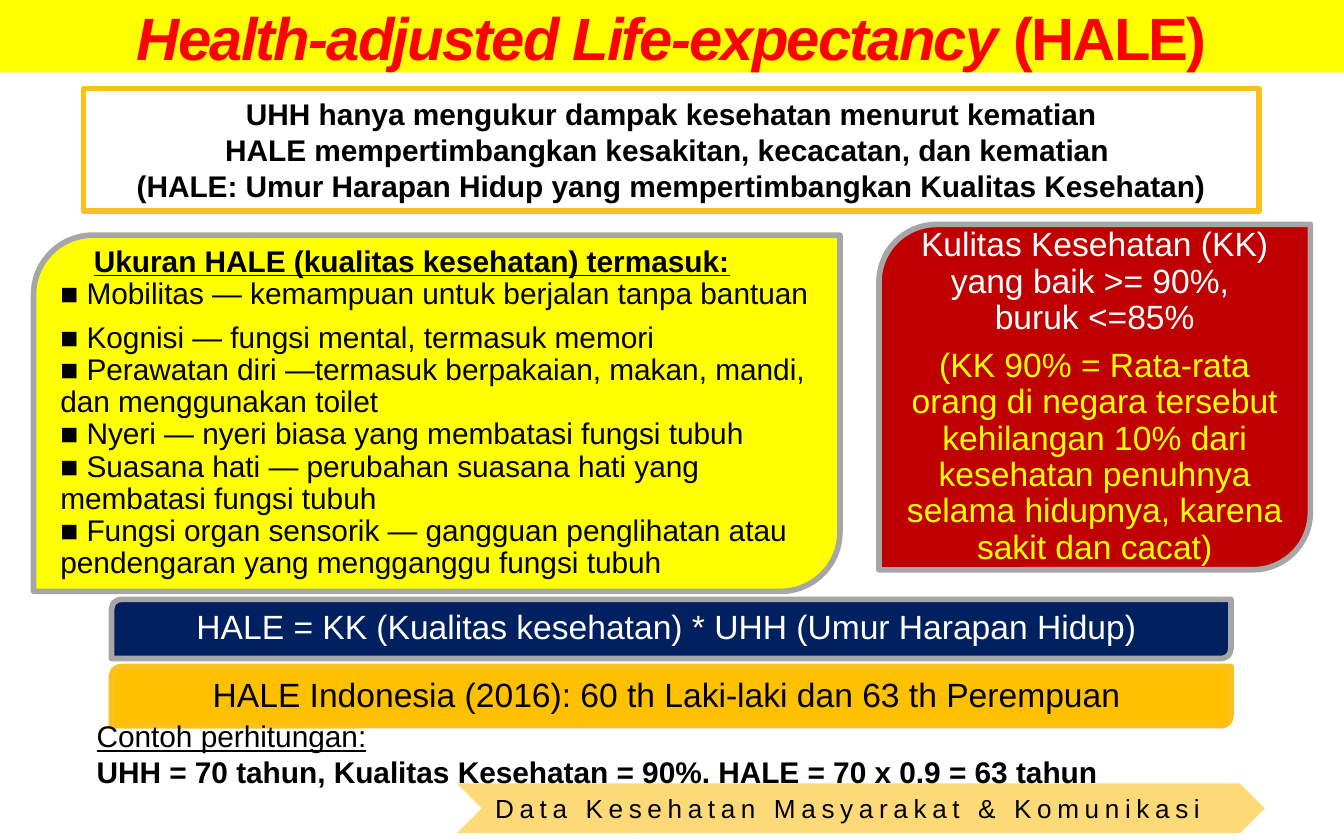
from lxml.etree import SubElement
from pptx import Presentation
from pptx.dml.color import RGBColor
from pptx.enum.shapes import MSO_SHAPE
from pptx.enum.text import MSO_ANCHOR, PP_ALIGN
from pptx.oxml.ns import qn
from pptx.util import Inches, Pt

BLACK = RGBColor(0x00, 0x00, 0x00)
WHITE = RGBColor(0xFF, 0xFF, 0xFF)
YELLOW = RGBColor(0xFF, 0xFF, 0x00)
RED = RGBColor(0xFF, 0x00, 0x00)
DARK_RED = RGBColor(0xC0, 0x00, 0x00)
NAVY = RGBColor(0x00, 0x20, 0x60)
GOLD = RGBColor(0xFF, 0xC0, 0x00)
AMBER = RGBColor(0xFB, 0xC0, 0x1E)
PALE_AMBER = RGBColor(0xFD, 0xD9, 0x78)
GREY = RGBColor(0xA6, 0xA6, 0xA6)


def add_box(kind, left, top, width, height, fill=None, line=None, inset=None):
    """Add a shadowless shape with wrapped, vertically centred text."""
    sp = s.shapes.add_shape(kind, Inches(left), Inches(top), Inches(width), Inches(height))
    sp.shadow.inherit = False
    if fill is None:
        sp.fill.background()
    else:
        sp.fill.solid()
        sp.fill.fore_color.rgb = fill
    if line is None:
        sp.line.fill.background()
    else:
        sp.line.color.rgb = line
        sp.line.width = Pt(3)
    tf = sp.text_frame
    tf.word_wrap = True
    tf.vertical_anchor = MSO_ANCHOR.MIDDLE
    if inset is not None:
        tf.margin_left = tf.margin_right = tf.margin_top = tf.margin_bottom = Inches(inset)
    return tf


def add_paragraph(tf, runs, size, align=PP_ALIGN.CENTER, tight=False):
    """Add (lines, colour, styles) runs; styles holds any of b, i and u."""
    p = tf.paragraphs[0]
    if p.runs:
        p = tf.add_paragraph()
    p.alignment = align
    if tight:
        p.line_spacing = 0.9
        after = SubElement(p._p.get_or_add_pPr(), qn("a:spcAft"))
        SubElement(after, qn("a:spcPct")).set("val", "35000")
    for lines, color, styles in runs:
        for n, line in enumerate(lines.split("\n")):
            if n:
                p.add_line_break()
            if not line:
                continue
            r = p.add_run()
            r.text = line
            r.font.name = "Arial"
            r.font.size = Pt(size)
            r.font.color.rgb = color
            r.font.bold = "b" in styles
            r.font.italic = "i" in styles
            r.font.underline = "u" in styles
    return p


prs = Presentation()
prs.slide_width = Inches(10)
prs.slide_height = Inches(6.25)
s = prs.slides.add_slide(prs.slide_layouts[6])

# Footer ribbon
tf = add_box(MSO_SHAPE.CHEVRON, 3.4, 5.83, 6.01, 0.37, PALE_AMBER)
p = add_paragraph(tf, [("Data Kesehatan Masyarakat & Komunikasi", BLACK, "")], 14, PP_ALIGN.JUSTIFY)
p.runs[0].font._element.set("spc", "300")

# Title band
tf = add_box(MSO_SHAPE.RECTANGLE, 0, 0, 10, 0.54, YELLOW)
p = add_paragraph(tf, [("Health-adjusted Life-expectancy", RED, "bi"), (" (HALE)", RED, "b")], 32)
for r in p.runs:
    r.font._element.set("spc", "-100")

# Introduction
tf = add_box(MSO_SHAPE.RECTANGLE, 0.62, 0.66, 8.75, 0.91, line=AMBER)
for text in (
    "UHH hanya mengukur dampak kesehatan menurut kematian",
    "HALE mempertimbangkan kesakitan, kecacatan, dan kematian ",
    "(HALE: Umur Harapan Hidup yang mempertimbangkan Kualitas Kesehatan)",
):
    add_paragraph(tf, [(text, BLACK, "b")], 16)

# Measures of HALE
measures = [
    "■ Kognisi — fungsi mental, termasuk memori",
    "■ Perawatan diri —termasuk berpakaian, makan, mandi, dan menggunakan toilet",
    "■ Nyeri — nyeri biasa yang membatasi fungsi tubuh",
    "■ Suasana hati — perubahan suasana hati yang membatasi fungsi tubuh",
    "■ Fungsi organ sensorik — gangguan penglihatan atau pendengaran yang mengganggu fungsi tubuh",
]
tf = add_box(MSO_SHAPE.ROUND_2_DIAG_RECTANGLE, 0.25, 1.75, 6, 2.65, YELLOW, GREY, 0.07)
p = add_paragraph(tf, [
    ("Ukuran HALE (kualitas kesehatan) termasuk:\n", BLACK, "bu"),
    ("■ Mobilitas — kemampuan untuk berjalan tanpa bantuan", BLACK, ""),
], 16, PP_ALIGN.LEFT, tight=True)
p._p.pPr.set("indent", str(Inches(0.25)))  # sets in the heading line only
add_paragraph(tf, [("\n".join(measures), BLACK, "")], 16, PP_ALIGN.LEFT, tight=True)

# Quality of health
tf = add_box(MSO_SHAPE.ROUND_2_DIAG_RECTANGLE, 6.54, 1.67, 3.21, 2.57, DARK_RED, GREY, 0.07)
for text, color in (
    ("Kulitas Kesehatan (KK) yang baik >= 90%, \nburuk <=85%", WHITE),
    ("(KK 90% = Rata-rata orang di negara tersebut kehilangan 10% dari kesehatan penuhnya "
     "selama hidupnya, karena sakit dan cacat)", YELLOW),
):
    add_paragraph(tf, [(text, color, "")], 18, tight=True)

# Formula and national figure
for top, fill, line, color, text in (
    (4.46, NAVY, GREY, WHITE, "HALE = KK (Kualitas kesehatan) * UHH (Umur Harapan Hidup) "),
    (4.96, GOLD, AMBER, BLACK, "HALE Indonesia (2016): 60 th Laki-laki dan 63 th Perempuan "),
):
    tf = add_box(MSO_SHAPE.ROUND_2_DIAG_RECTANGLE, 0.83, top, 8.33, 0.44, fill, line, 0.07)
    add_paragraph(tf, [(text, color, "")], 18, tight=True)

# Worked example
tf = s.shapes.add_textbox(Inches(0.62), Inches(5.29), Inches(8.75), Inches(0.64)).text_frame
tf.word_wrap = True
add_paragraph(tf, [
    ("Contoh perhitungan:\n", BLACK, "u"),
    ("UHH = 70 tahun, Kualitas Kesehatan = 90%. HALE = 70 x 0.9 = 63 tahun", BLACK, "b"),
], 16, PP_ALIGN.LEFT)

prs.save("out.pptx")
